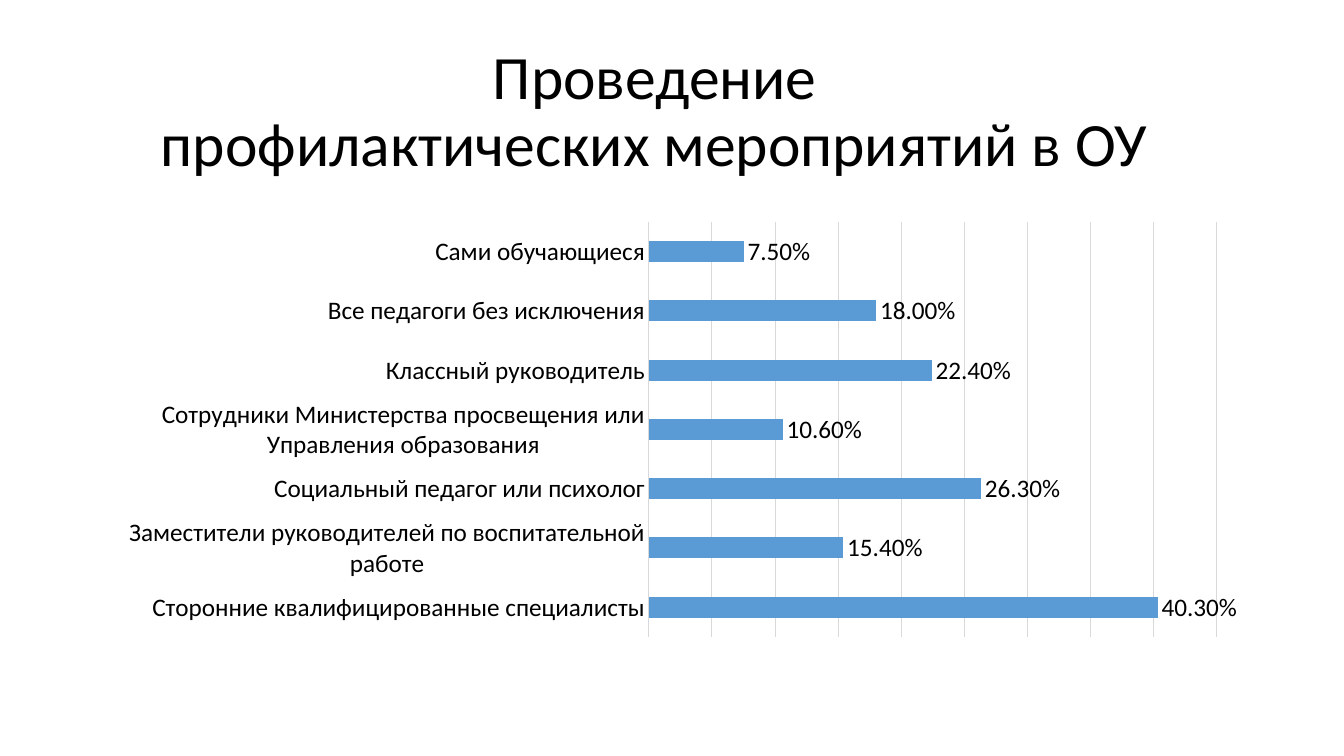
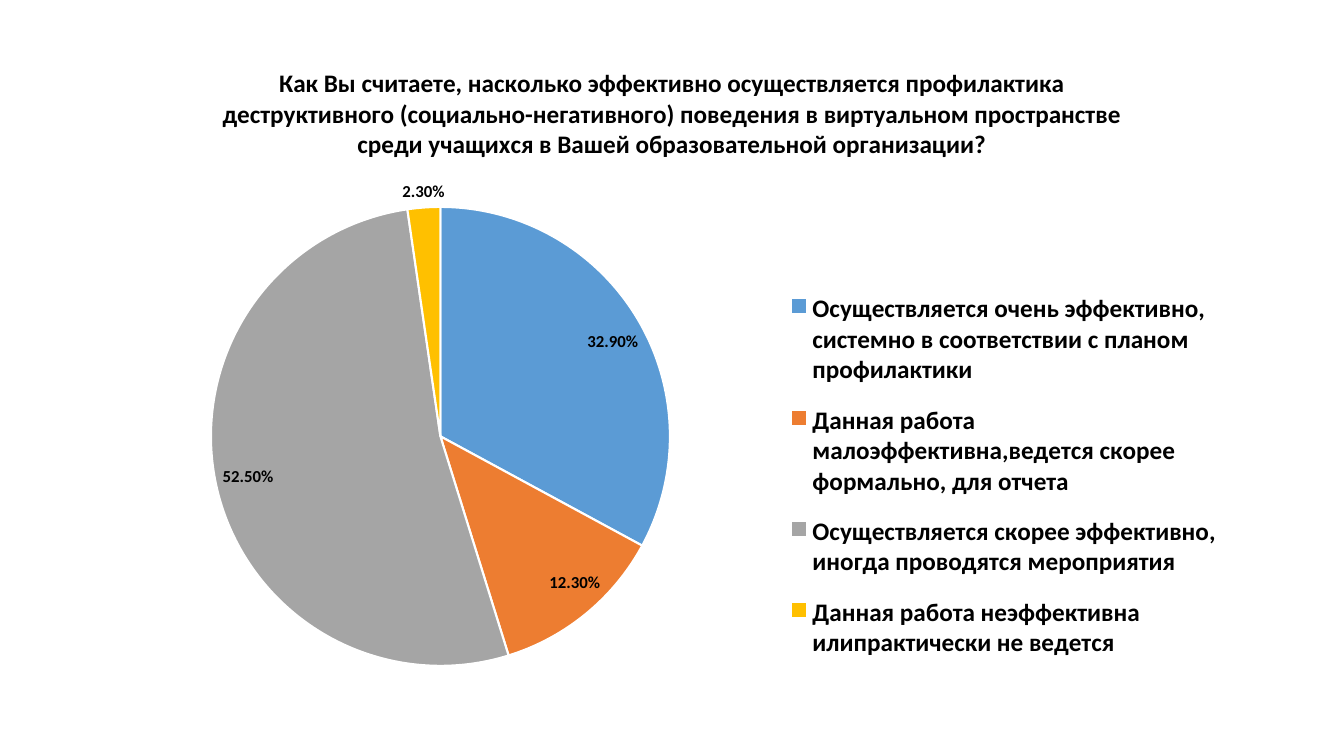
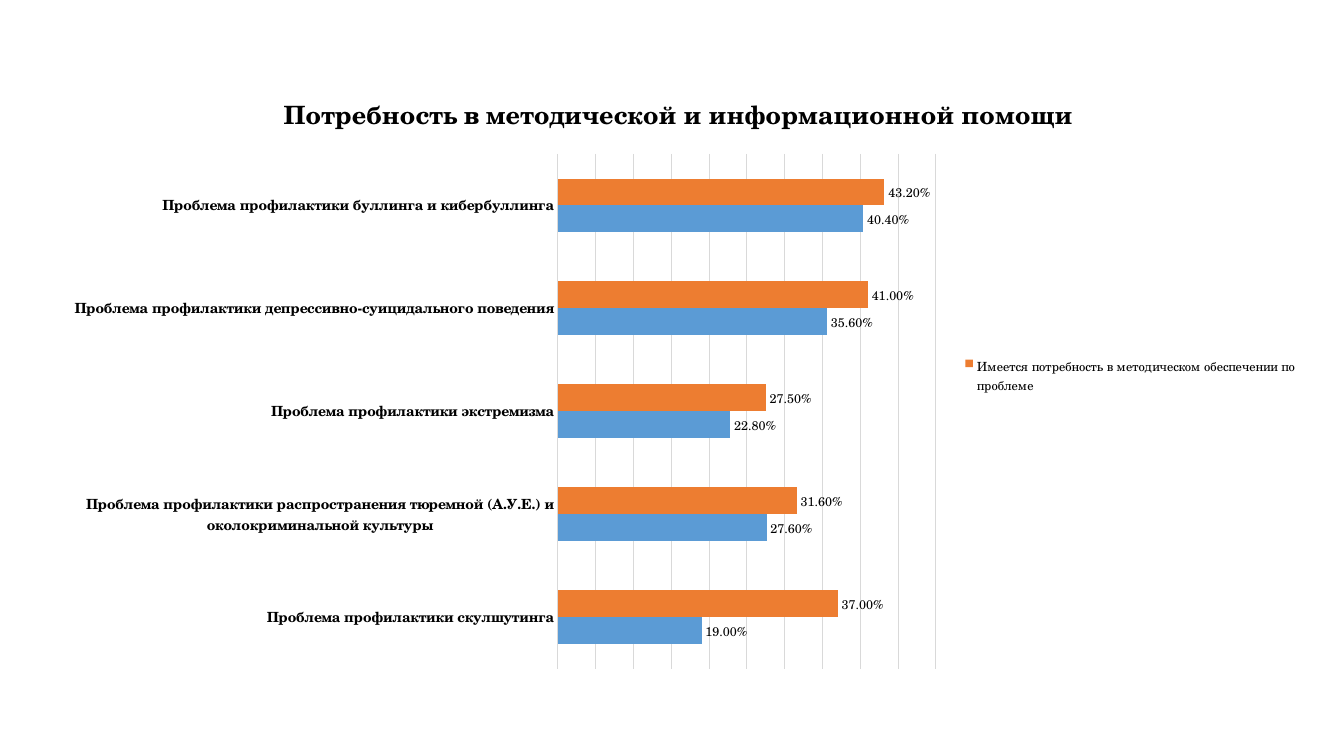
from lxml import etree
from pptx import Presentation
from pptx.chart.data import CategoryChartData
from pptx.dml.color import RGBColor
from pptx.enum.chart import XL_CHART_TYPE, XL_LABEL_POSITION, XL_LEGEND_POSITION, XL_TICK_MARK
from pptx.enum.text import MSO_ANCHOR, PP_ALIGN
from pptx.oxml.ns import qn
from pptx.util import Pt

PX = 914400 / 100.8
SLIDE_SIZE = (1344, 756)
TITLE_ONLY, BLANK = 5, 6

BAR, PIE = XL_CHART_TYPE.BAR_CLUSTERED, XL_CHART_TYPE.PIE
OUTSIDE_END, BEST_FIT = XL_LABEL_POSITION.OUTSIDE_END, XL_LABEL_POSITION.BEST_FIT
LEGEND_RIGHT = XL_LEGEND_POSITION.RIGHT
NO_TICK = XL_TICK_MARK.NONE
MIDDLE, CENTER = MSO_ANCHOR.MIDDLE, PP_ALIGN.CENTER

BLACK = RGBColor(0x00, 0x00, 0x00)
WHITE = RGBColor(0xFF, 0xFF, 0xFF)
GRID = RGBColor(0xD9, 0xD9, 0xD9)
BLUE = RGBColor(0x5B, 0x9B, 0xD5)
ORANGE = RGBColor(0xED, 0x7D, 0x31)
GRAY = RGBColor(0xA5, 0xA5, 0xA5)
GOLD = RGBColor(0xFF, 0xC0, 0x00)
PALETTE = [BLUE, ORANGE, GRAY, GOLD]

SANS, SERIF = "Calibri", "TeX Gyre Schola"
PERCENT = "0.00%"
UNNAMED = "Series 1"

# Boxes are left, top, width, height in px on the slide; a chart title has left and top only.
SLIDES = [
    {
        "title": "Проведение\vпрофилактических мероприятий в ОУ",
        "title_box": (93, 40, 1124, 146),
        "type": BAR,
        "box": (93, 202, 1159, 480),
        "plot_box": (649, 222, 568, 415),
        "font": SANS, "size": 18, "label_size": 18, "bold": False,
        "maximum": 0.45,
        "categories": [
            "Сторонние квалифицированные специалисты",
            "Заместители руководителей по воспитательной работе",
            "Социальный педагог или психолог",
            "Сотрудники Министерства просвещения или Управления образования",
            "Классный руководитель",
            "Все педагоги без исключения",
            "Сами обучающиеся",
        ],
        "series": [(UNNAMED, [0.403, 0.154, 0.263, 0.106, 0.224, 0.18, 0.075])],
    },
    {
        "chart_title": "Как Вы считаете, насколько эффективно осуществляется профилактика "
                       "деструктивного (социально-негативного) поведения в виртуальном "
                       "пространстве среди учащихся в Вашей образовательной организации?",
        "chart_title_at": (218, 61),
        "type": PIE,
        "box": (93, 42, 1159, 638),
        "plot_box": (211, 207, 459, 459),
        "legend_box": (778, 274, 452, 404), "legend_size": 18,
        "font": SANS, "size": 12, "label_size": 12, "bold": True,
        "categories": [
            "Осуществляется очень эффективно, системно в соответствии с планом профилактики",
            "Данная работа малоэффективна,ведется скорее формально, для отчета",
            "Осуществляется скорее эффективно, иногда проводятся мероприятия",
            "Данная работа неэффективна илипрактически не ведется",
        ],
        "series": [(UNNAMED, [0.329, 0.123, 0.525, 0.023])],
    },
    {
        "chart_title": "Потребность в методической и информационной помощи",
        "chart_title_at": (279, 87),
        "type": BAR,
        "box": (49, 70, 1257, 611),
        "plot_box": (558, 154, 378, 515),
        "legend_box": (957, 353, 346, 46), "legend_size": 9, "hidden_entry": 1,
        "font": SERIF, "size": 10, "label_size": 9, "bold": True,
        "maximum": 0.5,
        "categories": [
            "Проблема профилактики скулшутинга",
            "Проблема профилактики распространения тюремной (А.У.Е.) и околокриминальной культуры",
            "Проблема профилактики экстремизма",
            "Проблема профилактики депрессивно-суицидального поведения",
            "Проблема профилактики буллинга и кибербуллинга",
        ],
        "series": [
            (UNNAMED, [0.19, 0.276, 0.228, 0.356, 0.404]),
            ("Имеется потребность в методическом обеспечении по проблеме",
             [0.37, 0.316, 0.275, 0.41, 0.432]),
        ],
    },
]


def emu(lengths):
    return [round(length * PX) for length in lengths]


def style_font(font, name, size, bold=False):
    font.name, font.size, font.bold = name, Pt(size), bold
    font.color.rgb = BLACK


def set_layout(element, chart_box, box):
    """Pin a chart part to a px box, written as fractions of the chart."""
    for layout in element.findall(qn("c:layout")):
        element.remove(layout)
    before = [qn("c:tx"), qn("c:legendPos"), qn("c:legendEntry")]
    layout = etree.Element(qn("c:layout"))
    element.insert(sum(child.tag in before for child in element), layout)
    manual = etree.SubElement(layout, qn("c:manualLayout"))
    if element.tag == qn("c:plotArea"):
        etree.SubElement(manual, qn("c:layoutTarget")).set("val", "inner")
    left, top, width, height = chart_box
    for axis in "xy":
        etree.SubElement(manual, qn(f"c:{axis}Mode")).set("val", "edge")
    fractions = [(box[0] - left) / width, (box[1] - top) / height]
    fractions += [length / whole for length, whole in zip(box[2:], (width, height))]
    for tag, fraction in zip("xywh", fractions):
        etree.SubElement(manual, qn(f"c:{tag}")).set("val", f"{fraction:.4f}")


def add_title(slide, content):
    title = slide.shapes.title
    title.left, title.top, title.width, title.height = emu(content["title_box"])
    title.text_frame.text = content["title"]
    title.text_frame.vertical_anchor = MIDDLE
    paragraph = title.text_frame.paragraphs[0]
    paragraph.alignment, paragraph.line_spacing = CENTER, 0.9
    for run in paragraph.runs:
        style_font(run.font, SANS, 44)


def style_axes(chart, content):
    category_axis, value_axis = chart.category_axis, chart.value_axis
    category_axis.major_tick_mark = category_axis.minor_tick_mark = NO_TICK
    style_font(category_axis.tick_labels.font, content["font"], content["size"], content["bold"])
    value_axis.visible = False
    value_axis.minimum_scale, value_axis.maximum_scale = 0, content["maximum"]
    value_axis.major_unit = 0.05
    for line in (category_axis.format.line, value_axis.major_gridlines.format.line):
        line.color.rgb, line.width = GRID, Pt(0.75)


def style_series(chart, content):
    plot = chart.plots[0]
    is_pie = content["type"] == PIE
    plot.vary_by_categories = is_pie
    if not is_pie:
        plot.gap_width, plot.overlap = 182, 0
    for series, color in zip(plot.series, PALETTE):
        if is_pie:
            for index, point_color in enumerate(PALETTE):
                point_format = series.points[index].format
                point_format.fill.solid()
                point_format.fill.fore_color.rgb = point_color
                point_format.line.color.rgb, point_format.line.width = WHITE, Pt(1.5)
        else:
            series.format.fill.solid()
            series.format.fill.fore_color.rgb = color
        labels = series.data_labels
        labels.show_value = True
        labels.show_percentage = False
        labels.number_format, labels.number_format_is_linked = PERCENT, False
        labels.position = BEST_FIT if is_pie else OUTSIDE_END
        style_font(labels.font, content["font"], content["label_size"], is_pie)


def add_chart_title(chart, content):
    chart.has_title = "chart_title" in content
    if chart.has_title:
        text_frame = chart.chart_title.text_frame
        text_frame.text = content["chart_title"]
        style_font(text_frame.paragraphs[0].runs[0].font, content["font"], 18, True)
        set_layout(chart.element.xpath("c:chart/c:title")[0],
                   content["box"], content["chart_title_at"])


def add_legend(chart, content):
    chart.has_legend = "legend_box" in content
    if not chart.has_legend:
        return
    legend = chart.legend
    legend.position, legend.include_in_layout = LEGEND_RIGHT, False
    style_font(legend.font, content["font"], content["legend_size"], content["type"] == PIE)
    element = chart.element.xpath("c:chart/c:legend")[0]
    if "hidden_entry" in content:
        entry = etree.Element(qn("c:legendEntry"))
        etree.SubElement(entry, qn("c:idx")).set("val", str(content["hidden_entry"]))
        etree.SubElement(entry, qn("c:delete")).set("val", "1")
        element.find(qn("c:legendPos")).addnext(entry)
    set_layout(element, content["box"], content["legend_box"])


def add_survey_chart(slide, content):
    data = CategoryChartData(number_format=PERCENT)
    data.categories = content["categories"]
    for name, values in content["series"]:
        data.add_series(name, values)
    chart = slide.shapes.add_chart(content["type"], *emu(content["box"]), data).chart
    style_font(chart.font, content["font"], content["size"])
    add_chart_title(chart, content)
    add_legend(chart, content)
    style_series(chart, content)
    if content["type"] == BAR:
        style_axes(chart, content)
    set_layout(chart.element.xpath("c:chart/c:plotArea")[0], content["box"], content["plot_box"])


def main():
    presentation = Presentation()
    presentation.slide_width, presentation.slide_height = emu(SLIDE_SIZE)
    for content in SLIDES:
        layout = TITLE_ONLY if "title" in content else BLANK
        slide = presentation.slides.add_slide(presentation.slide_layouts[layout])
        if "title" in content:
            add_title(slide, content)
        add_survey_chart(slide, content)
    presentation.save("out.pptx")


if __name__ == "__main__":
    main()
